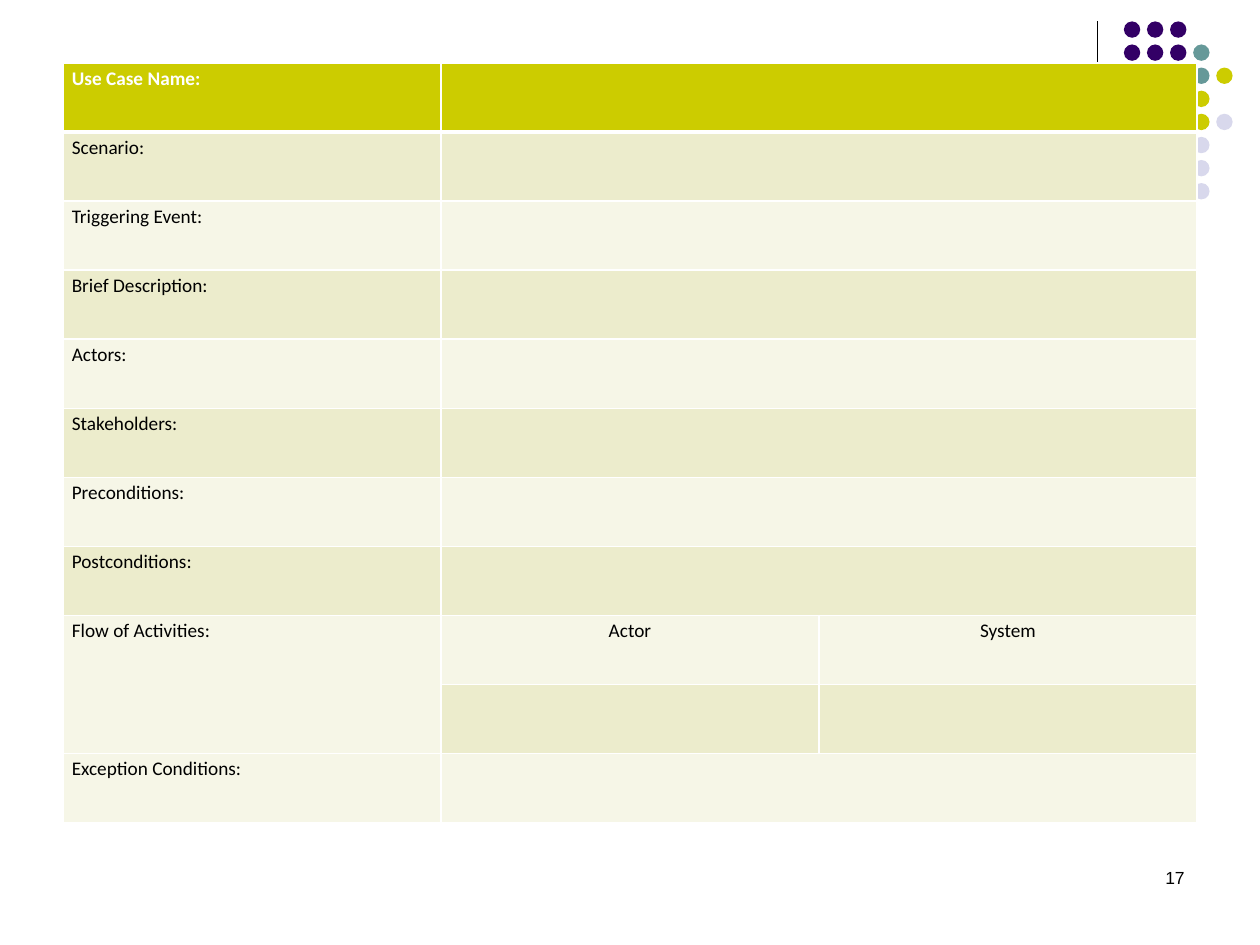
from lxml import etree
from pptx import Presentation
from pptx.dml.color import RGBColor
from pptx.enum.shapes import MSO_CONNECTOR, MSO_SHAPE
from pptx.enum.text import PP_ALIGN
from pptx.oxml.ns import qn
from pptx.util import Inches, Pt

LINE, OVAL = MSO_CONNECTOR.STRAIGHT, MSO_SHAPE.OVAL
LEFT, CENTER, RIGHT = PP_ALIGN.LEFT, PP_ALIGN.CENTER, PP_ALIGN.RIGHT

COLORS = {
    "black": "000000", "white": "FFFFFF", "header": "CCCC00",
    "odd": "ECECCC", "even": "F6F6E7",
    "P": "330066", "T": "669999", "Y": "CCCC00", "L": "D8D8EC",
}
DOT_ROWS = ["PPP", "PPPT", "PPTTY", "PTTY", "TTYYL", "TYYL", "YYLL", " L L"]
DOT_LEFT, DOT_TOP, DOT_PITCH, DOT_SIZE = 8.92, 0.17, 0.55 / 3, 0.13
LABELS = [
    "Use Case Name:", "Scenario:", "Triggering Event:", "Brief Description:",
    "Actors:", "Stakeholders:", "Preconditions:", "Postconditions:",
    "Flow of Activities:", "", "Exception Conditions:",
]
FLOW_ROW = LABELS.index("Flow of Activities:")
MARGIN, COL_W, TABLE_H = 0.5, 3, 6.03


def color(name):
    """Return the named colour."""
    return RGBColor.from_string(COLORS[name])


def put_text(tf, text, *, font="Calibri", size=11, fill="black", bold=False,
             align=LEFT, spacing=None, after=None):
    """Write one formatted paragraph into a text frame."""
    p = tf.paragraphs[0]
    p.alignment, p.line_spacing = align, spacing
    if after is not None:
        p.space_after = Pt(after)
    r = p.add_run()
    r.text = text
    r.font.name, r.font.size, r.font.bold = font, Pt(size), bold
    r.font.color.rgb = color(fill)


def add_rule(s, x, top, bottom):
    """Draw the thin vertical rule beside the dots."""
    sp = s.shapes.add_connector(LINE, Inches(x), Inches(top), Inches(x), Inches(bottom))
    sp.line.color.rgb, sp.line.width = color("black"), Pt(0.75)
    etree.SubElement(sp._element.spPr, qn("a:effectLst"))


def add_dots(s):
    """Draw the grouped dot pattern on its grid."""
    group = s.shapes.add_group_shape()
    for row, keys in enumerate(DOT_ROWS):
        for col, key in enumerate(keys):
            if key == " ":
                continue
            sp = group.shapes.add_shape(
                OVAL, Inches(DOT_LEFT + col * DOT_PITCH),
                Inches(DOT_TOP + row * DOT_PITCH), Inches(DOT_SIZE), Inches(DOT_SIZE))
            sp.shadow.inherit = False
            sp.fill.solid()
            sp.fill.fore_color.rgb = color(key)
            sp.line.fill.background()


def set_borders(cell, bottom=1, top=1):
    """Give a cell white borders with widths in points."""
    tc_pr = cell._tc.get_or_add_tcPr()
    widths = {"lnL": 1, "lnR": 1, "lnT": top, "lnB": bottom}
    for i, (tag, width) in enumerate(widths.items()):
        ln = etree.Element(qn(f"a:{tag}"), w=str(Pt(width)))
        fill = etree.SubElement(ln, qn("a:solidFill"))
        etree.SubElement(fill, qn("a:srgbClr"), val=COLORS["white"])
        tc_pr.insert(i, ln)


def fill_cell(cell, text, **fmt):
    """Write a table cell's text with its margins and spacing."""
    cell.margin_left = cell.margin_right = Inches(0.07)
    cell.margin_top = cell.margin_bottom = 0
    put_text(cell.text_frame, text, spacing=1.15, after=10, **fmt)


def add_use_case_table(s):
    """Build the use case form."""
    rows = len(LABELS)
    table = s.shapes.add_table(rows, 3, Inches(MARGIN), Inches(MARGIN),
                               Inches(3 * COL_W), Inches(TABLE_H)).table
    table.first_row = table.horz_banding = False
    for row, label in enumerate(LABELS):
        table.rows[row].height = Inches(TABLE_H / rows)
        band = "header" if row == 0 else ("even", "odd")[row % 2]
        for col in range(3):
            cell = table.cell(row, col)
            cell.fill.solid()
            cell.fill.fore_color.rgb = color(band)
            set_borders(cell, bottom=3 if row == 0 else 1, top=3 if row == 1 else 1)
        if row not in (FLOW_ROW, FLOW_ROW + 1):
            table.cell(row, 1).merge(table.cell(row, 2))
        if label:
            fill_cell(table.cell(row, 0), label, bold=row == 0,
                      fill="white" if row == 0 else "black")
    table.cell(FLOW_ROW, 0).merge(table.cell(FLOW_ROW + 1, 0))
    for col, heading in enumerate(("Actor", "System"), 1):
        fill_cell(table.cell(FLOW_ROW, col), heading, align=CENTER)


def add_page_number(s, number):
    """Place the page number at the lower right."""
    sp = s.shapes.add_textbox(Inches(8.25), Inches(6.83), Inches(1.25), Inches(0.5))
    sp.text_frame.word_wrap = True
    put_text(sp.text_frame, number, font="Arial", size=10, align=RIGHT)


def main():
    """Build and save the slide."""
    prs = Presentation()
    prs.slide_width, prs.slide_height = Inches(10), Inches(7.5)
    s = prs.slides.add_slide(prs.slide_layouts[6])
    add_rule(s, 8.71, 0.17, 1.83)
    add_dots(s)
    add_use_case_table(s)
    add_page_number(s, "17")
    prs.save("out.pptx")


if __name__ == "__main__":
    main()
